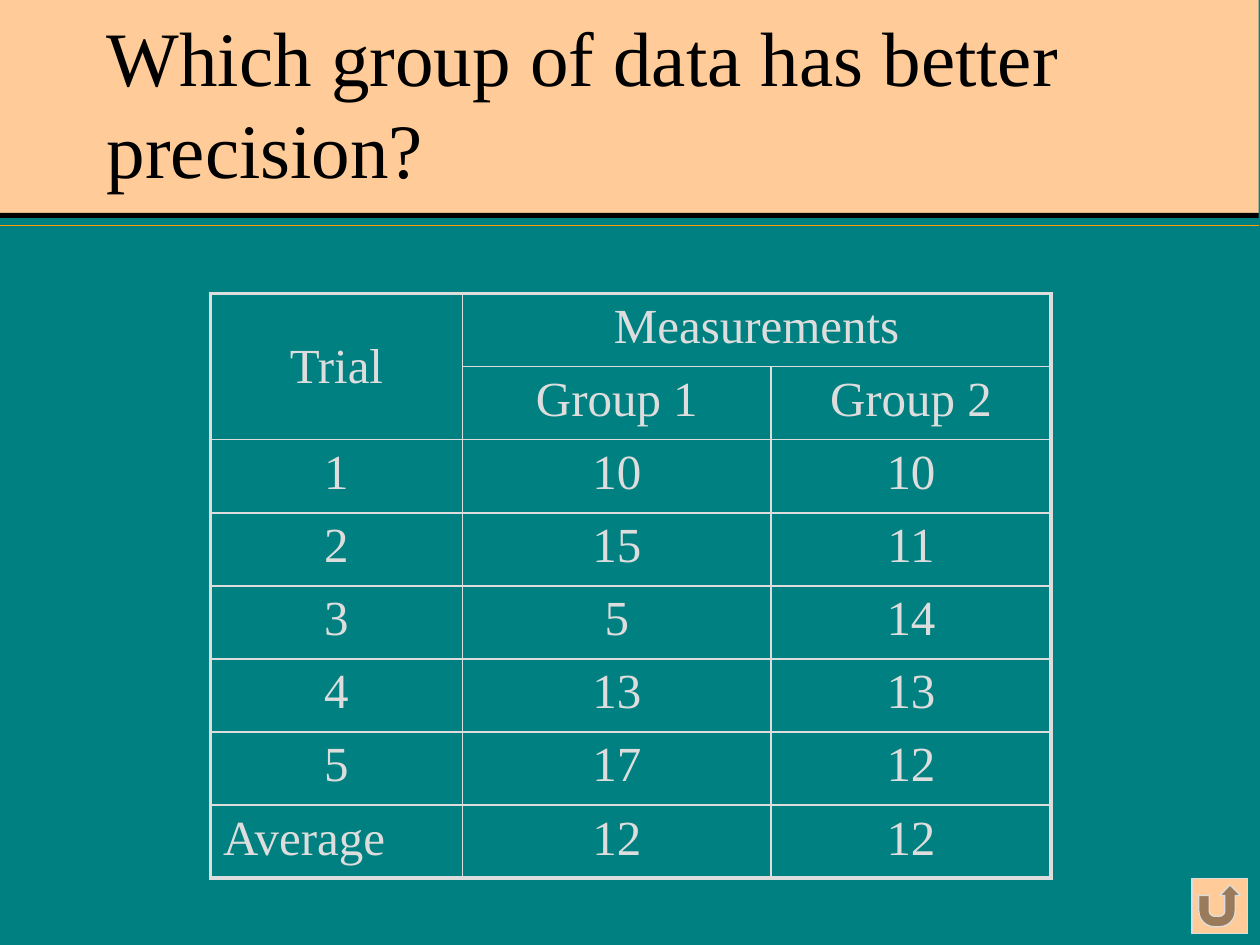
import pptx
import pptx.dml.color
import pptx.enum.shapes
import pptx.enum.text
import pptx.oxml
import pptx.oxml.ns
import pptx.util
from pptx.util import Inches
from lxml import etree

TEAL = pptx.dml.color.RGBColor(0x00, 0x80, 0x80)
PEACH = pptx.dml.color.RGBColor(0xFF, 0xCC, 0x99)
BLACK = pptx.dml.color.RGBColor(0x00, 0x00, 0x00)
ORANGE = pptx.dml.color.RGBColor(0xFF, 0x99, 0x00)
LIGHT_GRAY = pptx.dml.color.RGBColor(0xDD, 0xDD, 0xDD)
FONT = "Times New Roman"
BAND_WIDTH = 9.99
ROW_HEIGHT = 0.58
COLUMN_WIDTHS = [2, 2.45, 2.22]
THIN, THICK = 1, 2.25
MEASUREMENTS = [
    ["Trial", "Measurements", ""],
    ["", "Group 1", "Group 2"],
    ["1", "10", "10"],
    ["2", "15", "11"],
    ["3", "5", "14"],
    ["4", "13", "13"],
    ["5", "17", "12"],
    ["Average", "12", "12"],
]
qn = pptx.oxml.ns.qn


def format_runs(paragraph, size, color):
    for run in paragraph.runs:
        run.font.name = FONT
        run.font.size = pptx.util.Pt(size)
        run.font.color.rgb = color


def add_filled_shape(slide, kind, left, top, width, height, fill, line=None):
    shape = slide.shapes.add_shape(
        kind, Inches(left), Inches(top), Inches(width), Inches(height)
    )
    shape.shadow.inherit = False
    shape.fill.solid()
    shape.fill.fore_color.rgb = fill
    if line is None:
        shape.line.fill.background()
    else:
        shape.line.color.rgb = line
        shape.line.width = pptx.util.Pt(0.75)


def add_rule(slide, top):
    rule = slide.shapes.add_connector(
        pptx.enum.shapes.MSO_CONNECTOR.STRAIGHT,
        Inches(0), Inches(top), Inches(BAND_WIDTH), Inches(top),
    )
    rule.line.color.rgb = ORANGE
    rule.line.width = pptx.util.Pt(1)
    etree.SubElement(rule._element.spPr, qn("a:effectLst"))


def add_title(slide, text):
    title = slide.shapes.add_textbox(Inches(0.75), Inches(0.38), Inches(8.5), Inches(1.21))
    frame = title.text_frame
    frame.word_wrap = True
    frame.vertical_anchor = pptx.enum.text.MSO_ANCHOR.BOTTOM
    frame.text = text
    format_runs(frame.paragraphs[0], 44, BLACK)


def set_borders(cell, widths):
    properties = cell._tc.get_or_add_tcPr()
    for side, width in widths.items():
        border = etree.SubElement(properties, qn(f"a:ln{side}"), w=str(pptx.util.Pt(width)))
        fill = etree.SubElement(border, qn("a:solidFill"))
        etree.SubElement(fill, qn("a:srgbClr"), val=str(LIGHT_GRAY))


def set_space_before(paragraph, percent):
    spacing = etree.SubElement(paragraph._p.get_or_add_pPr(), qn("a:spcBef"))
    etree.SubElement(spacing, qn("a:spcPct"), val=str(percent * 1000))


def format_cell(cell, text, alignment, borders):
    cell.text = text
    paragraph = cell.text_frame.paragraphs[0]
    paragraph.alignment = alignment
    set_space_before(paragraph, 20)
    format_runs(paragraph, 28, LIGHT_GRAY)
    set_borders(cell, borders)
    cell.fill.background()


def add_measurement_table(slide):
    row_count, column_count = len(MEASUREMENTS), len(COLUMN_WIDTHS)
    table = slide.shapes.add_table(
        row_count, column_count, Inches(1.67), Inches(2.33),
        Inches(sum(COLUMN_WIDTHS)), Inches(row_count * ROW_HEIGHT),
    ).table
    table.first_row = False
    table.horz_banding = False
    for column, width in zip(table.columns, COLUMN_WIDTHS):
        column.width = Inches(width)
    for row in table.rows:
        row.height = Inches(ROW_HEIGHT)
    table.cell(0, 0).merge(table.cell(1, 0))
    table.cell(0, 1).merge(table.cell(0, 2))
    table.cell(0, 0).vertical_anchor = pptx.enum.text.MSO_ANCHOR.MIDDLE

    for row_index, texts in enumerate(MEASUREMENTS):
        for column_index, text in enumerate(texts):
            cell = table.cell(row_index, column_index)
            if cell.is_spanned:
                cell.fill.background()
                continue
            outer_edges = {
                "L": column_index == 0,
                "R": column_index + cell.span_width == column_count,
                "T": row_index == 0,
                "B": row_index + cell.span_height == row_count,
            }
            borders = {side: THICK if outer else THIN for side, outer in outer_edges.items()}
            alignment = pptx.enum.text.PP_ALIGN.CENTER
            if text == "Average":
                alignment = pptx.enum.text.PP_ALIGN.LEFT
            format_cell(cell, text, alignment, borders)


def main():
    presentation = pptx.Presentation()
    presentation.slide_width = Inches(10)
    presentation.slide_height = Inches(7.5)
    slide = presentation.slides.add_slide(presentation.slide_layouts[6])
    slide.background.fill.solid()
    slide.background.fill.fore_color.rgb = TEAL

    shapes = pptx.enum.shapes.MSO_SHAPE
    add_filled_shape(slide, shapes.RECTANGLE, 0, 0, BAND_WIDTH, 1.69, PEACH)
    add_filled_shape(slide, shapes.RECTANGLE, 0, 1.69, BAND_WIDTH, 0.04, BLACK)
    add_rule(slide, 1.79)
    add_title(slide, "Which group of data has better precision?")
    add_measurement_table(slide)
    add_filled_shape(
        slide, shapes.ACTION_BUTTON_RETURN, 9.46, 6.97, 0.44, 0.44, PEACH, LIGHT_GRAY
    )
    presentation.save("out.pptx")


if __name__ == "__main__":
    main()
